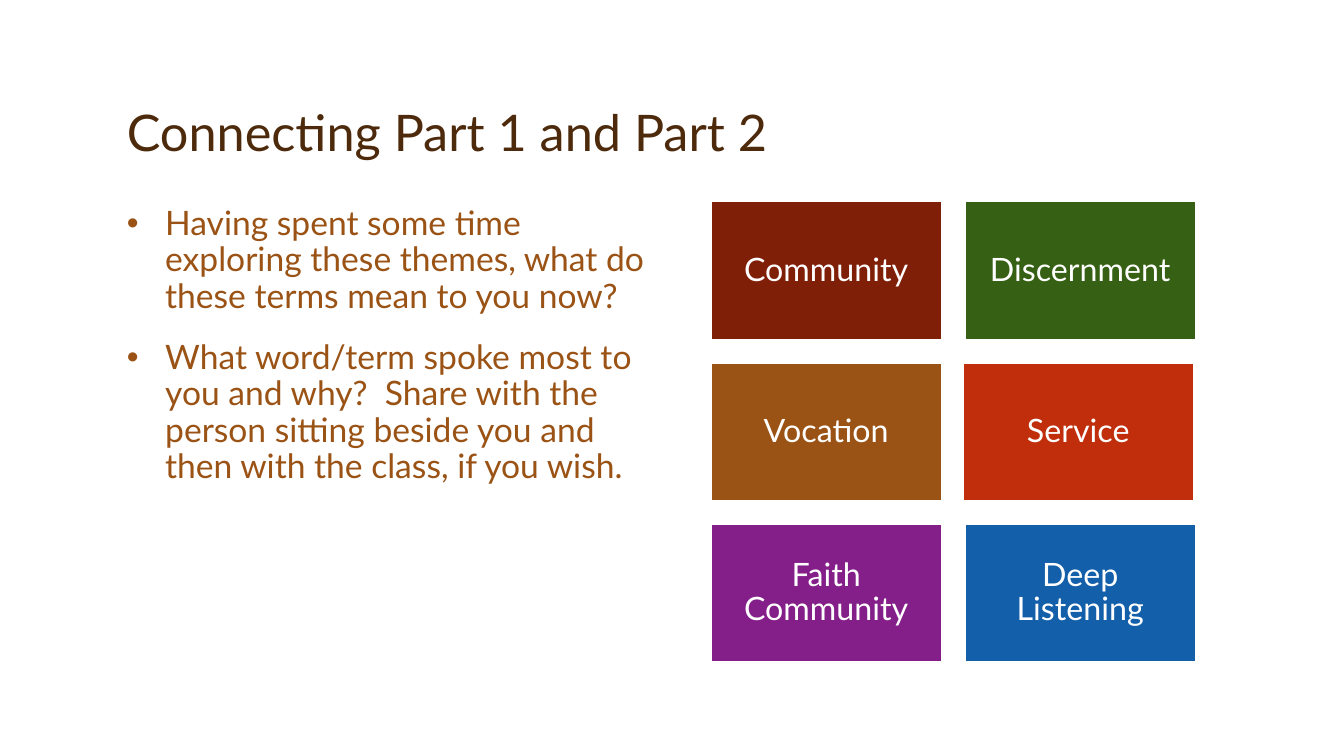
from lxml.etree import SubElement
from pptx import Presentation
from pptx.dml.color import RGBColor
from pptx.enum.shapes import MSO_SHAPE
from pptx.enum.text import MSO_ANCHOR, PP_ALIGN
from pptx.oxml.ns import qn
from pptx.util import Inches, Pt

FONT = "Lato"
COLORS = {
    "title": "4D2A0B", "body": "9A5315", "white": "FFFFFF",
    "community": "801F08", "discernment": "366013", "vocation": "9A5315",
    "service": "C02E0C", "faith": "841E89", "listening": "145FAA",
}
QUESTIONS = [
    "Having spent some time exploring these themes, what do these terms mean to you now?",
    "What word/term spoke most to you and why?  Share with the person sitting beside you "
    "and then with the class, if you wish.",
]
# Label, colour name and horizontal nudge in inches
THEMES = [
    ("Community", "community", 0), ("Discernment", "discernment", 0),
    ("Vocation", "vocation", 0), ("Service", "service", -0.02),
    ("Faith Community", "faith", 0), ("Deep Listening", "listening", 0),
]


def color(name):
    return RGBColor.from_string(COLORS[name])


def style(para, size, color_name):
    para.line_spacing = 0.9
    para.font.name = FONT
    para.font.size = Pt(size)
    para.font.color.rgb = color(color_name)


def add_text_frame(page, box):
    frame = page.shapes.add_textbox(*map(Inches, box)).text_frame
    frame.word_wrap = True
    return frame


def add_bullet(para, indent):
    properties = para._p.get_or_add_pPr()
    properties.set("marL", str(Inches(indent)))
    properties.set("indent", str(-Inches(indent)))
    SubElement(properties, qn("a:buFont"), typeface="Arial")
    SubElement(properties, qn("a:buChar"), char="•")


def add_title(page, box, text):
    frame = add_text_frame(page, box)
    frame.vertical_anchor = MSO_ANCHOR.BOTTOM
    para = frame.paragraphs[0]
    para.text = text
    style(para, 36, "title")


def add_questions(page, box, questions):
    frame = add_text_frame(page, box)
    for index, question in enumerate(questions):
        para = frame.add_paragraph() if index else frame.paragraphs[0]
        para.text = question
        add_bullet(para, 0.38)
        style(para, 24, "body")
        if index:
            para.space_before = Pt(18)


def add_tile(page, box, label, color_name):
    tile = page.shapes.add_shape(MSO_SHAPE.RECTANGLE, *map(Inches, box))
    tile.shadow.inherit = False
    tile.fill.solid()
    tile.fill.fore_color.rgb = color(color_name)
    tile.line.color.rgb = color("white")
    tile.line.width = Pt(1)
    frame = tile.text_frame
    frame.word_wrap = True
    frame.vertical_anchor = MSO_ANCHOR.MIDDLE
    frame.margin_left = frame.margin_right = Inches(0.1)
    frame.margin_top = frame.margin_bottom = Inches(0.1)
    para = frame.paragraphs[0]
    para.text = label
    para.alignment = PP_ALIGN.CENTER
    style(para, 23, color_name="white")


def add_theme_grid(page, box, themes, columns=2, gap=0.23):
    left, top, width, height = box
    rows = len(themes) // columns
    tile_width = (width - gap * (columns - 1)) / columns
    tile_height = (height - gap * (rows - 1)) / rows
    for index, (label, color_name, nudge) in enumerate(themes):
        row, column = divmod(index, columns)
        x = left + column * (tile_width + gap) + nudge
        y = top + row * (tile_height + gap)
        add_tile(page, (x, y, tile_width, tile_height), label, color_name)


def main():
    deck = Presentation()
    deck.slide_width, deck.slide_height = Inches(13.33), Inches(7.5)
    page = deck.slides.add_slide(deck.slide_layouts[6])

    # Title across the top, questions on the left, themes on the right
    add_title(page, (1.16, 0.33, 11, 1.33), "Connecting Part 1 and Part 2")
    add_questions(page, (1.16, 2, 5.42, 4.58), QUESTIONS)
    add_theme_grid(page, (7.05, 2, 4.81, 4.57), THEMES)

    deck.save("out.pptx")


if __name__ == "__main__":
    main()
